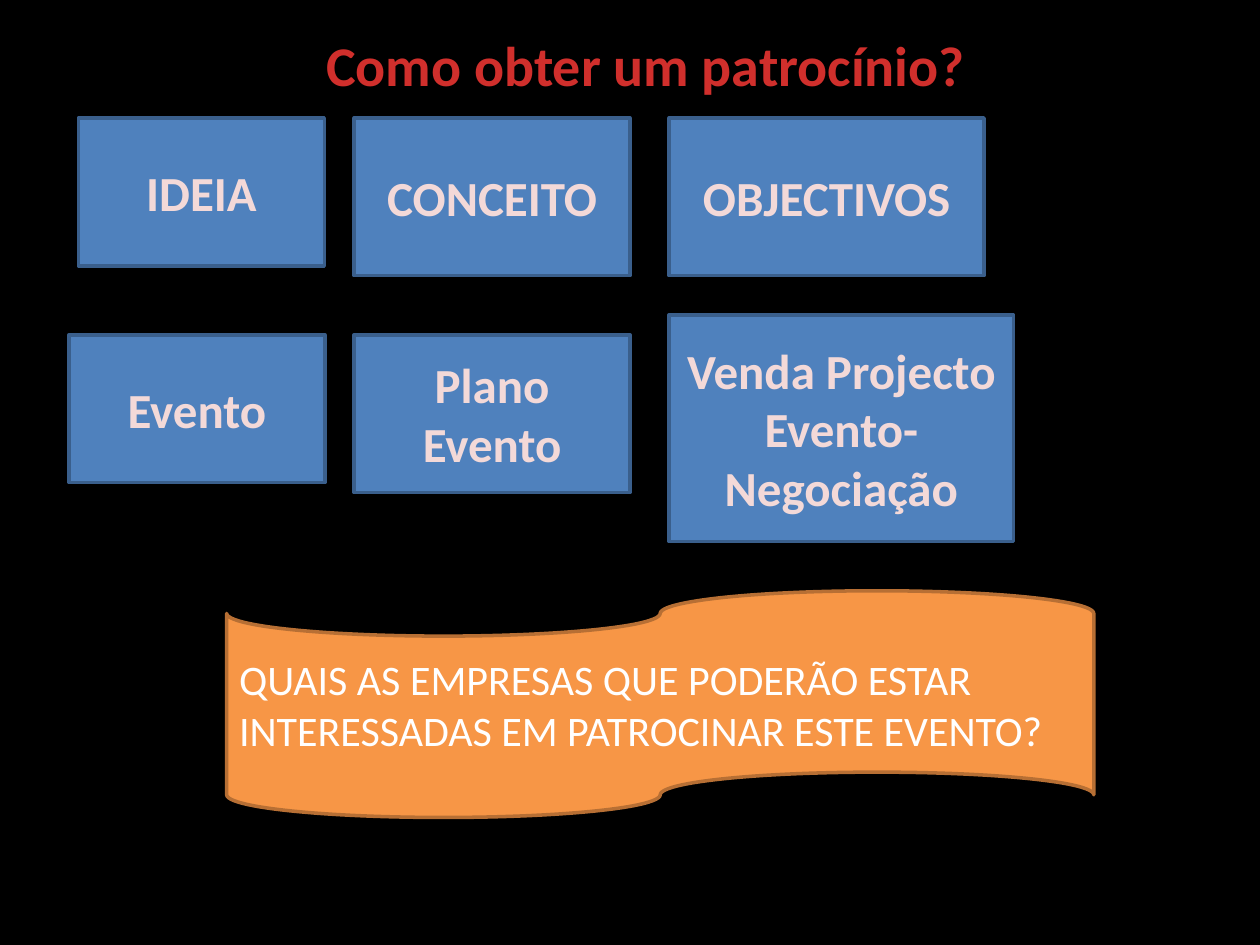
from dataclasses import dataclass

from lxml import etree
from pptx import Presentation
from pptx.dml.color import RGBColor as Rgb
from pptx.enum.shapes import MSO_SHAPE as Preset
from pptx.enum.text import MSO_ANCHOR as Anchor, PP_ALIGN as Align
from pptx.oxml import parse_xml
from pptx.oxml.ns import nsdecls, qn
from pptx.util import Cm, Pt


@dataclass(frozen=True)
class Theme:
    font: str = "Calibri"
    background: str = "000000"
    box_fill: str = "4F81BD"
    box_line: str = "3A5F8C"
    tape_fill: str = "F79646"
    tape_line: str = "B76F34"
    tape_text: str = "FFFFFF"
    outline: str = "D02F2A"
    title_stops: tuple = ((0, "FC7C7A"), (75, "D02F2C"), (100, "C70500"))
    box_stops: tuple = ((10, "FBF3F3"), (60, "F3D9D8"), (100, "E38C8B"))
    title_size: int = 32
    box_size: int = 28
    tape_size: int = 24
    line_width: int = 2


theme = Theme()


def add_panel(preset, bounds, fill, line):
    shape = slide.shapes.add_shape(preset, *(Cm(length) for length in bounds))
    shape.shadow.inherit = False
    shape.fill.solid()
    shape.fill.fore_color.rgb = Rgb.from_string(fill)
    shape.line.color.rgb = Rgb.from_string(line)
    shape.line.width = Pt(theme.line_width)
    return shape


def style_heading(shape, text, size, stops):
    frame = shape.text_frame
    frame.word_wrap = True
    frame.vertical_anchor = Anchor.MIDDLE
    frame.text = text
    paragraph = frame.paragraphs[0]
    paragraph.alignment = Align.CENTER
    font = paragraph.runs[0].font
    font.name, font.size, font.bold = theme.font, Pt(size), True
    font.fill.gradient()
    gradient = paragraph.runs[0]._r.rPr.find(qn("a:gradFill"))
    stop_list = gradient.find(qn("a:gsLst"))
    for stop in list(stop_list):
        stop_list.remove(stop)
    for position, color in stops:
        stop = etree.SubElement(stop_list, qn("a:gs"), pos=str(position * 1000))
        etree.SubElement(stop, qn("a:srgbClr"), val=color)
    gradient.find(qn("a:lin")).set("ang", "5400000")


presentation = Presentation()
presentation.slide_width, presentation.slide_height = Cm(25.4), Cm(19.05)
slide = presentation.slides.add_slide(presentation.slide_layouts[6])
slide.background.fill.solid()
slide.background.fill.fore_color.rgb = Rgb.from_string(theme.background)

title = slide.shapes.add_textbox(Cm(2.77), Cm(0), Cm(20.5), Cm(2.59))
style_heading(title, "Como obter um patrocínio?", theme.title_size, theme.title_stops)

boxes = [
    ("IDEIA", 1.58, 2.38, 4.96, 2.98),
    ("CONCEITO", 7.14, 2.38, 5.56, 3.18),
    ("OBJECTIVOS", 13.49, 2.38, 6.35, 3.18),
    ("Evento", 1.39, 6.75, 5.16, 2.98),
    ("Plano Evento", 7.14, 6.75, 5.56, 3.18),
    ("Venda Projecto Evento-Negociação", 13.49, 6.35, 6.94, 4.57),
]
for label, *bounds in boxes:
    box = add_panel(Preset.RECTANGLE, bounds, theme.box_fill, theme.box_line)
    style_heading(box, label, theme.box_size, theme.box_stops)
    run = box.text_frame.paragraphs[0].runs[0]
    run._r.rPr.insert(0, parse_xml(
        f'<a:ln {nsdecls("a")} w="{Pt(1.93)}"><a:solidFill>'
        f'<a:srgbClr val="{theme.outline}"/></a:solidFill></a:ln>'
    ))

tape = add_panel(
    Preset.FLOWCHART_PUNCHED_TAPE, (4.57, 11.91, 17.48, 4.57),
    theme.tape_fill, theme.tape_line,
)
tape.text_frame.word_wrap = True
tape.text_frame.vertical_anchor = Anchor.MIDDLE
tape.text_frame.text = (
    "QUAIS AS EMPRESAS QUE PODERÃO ESTAR\n"
    "INTERESSADAS EM PATROCINAR ESTE EVENTO?"
)
for paragraph in tape.text_frame.paragraphs:
    paragraph.alignment = Align.LEFT
    font = paragraph.runs[0].font
    font.name, font.size = theme.font, Pt(theme.tape_size)
    font.color.rgb = Rgb.from_string(theme.tape_text)

presentation.save("out.pptx")
